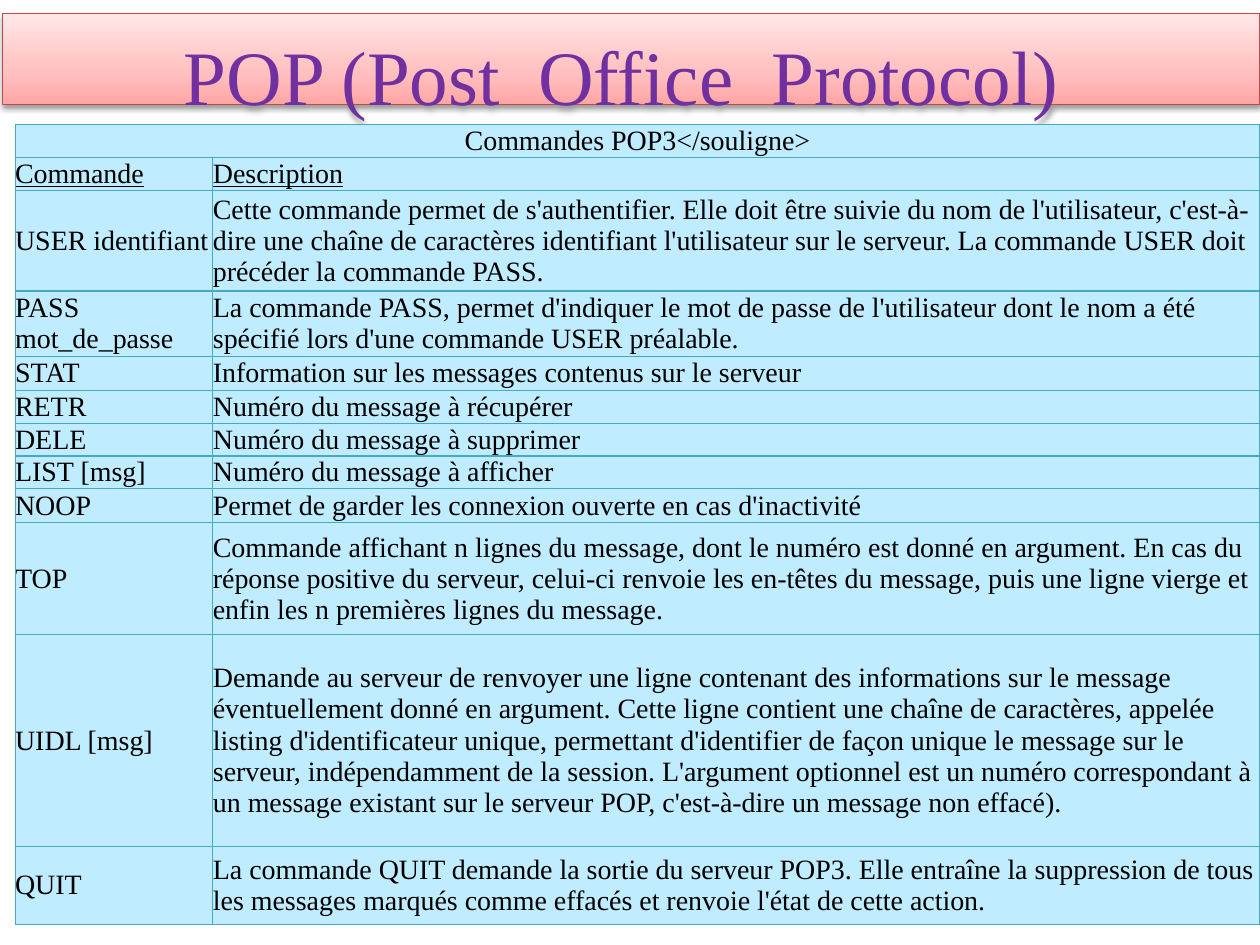
from lxml.etree import SubElement
from pptx import Presentation
from pptx.dml.color import RGBColor as RGB
from pptx.enum.text import MSO_ANCHOR as Anchor, MSO_AUTO_SIZE as AutoSize, PP_ALIGN as Align
from pptx.oxml import parse_xml
from pptx.oxml.ns import nsdecls, qn
from pptx.util import Inches, Pt

COLOURS = {
    "title": "7030A0", "title_line": "BF4C48", "text": "000000",
    "cell": "C0ECFF", "border": "46AAC5", "shadow": "000000",
}
TITLE_GRADIENT = [(0, "FFA6A5"), (35, "FFC0BF"), (100, "FFE7E7")]
FONT = "Times New Roman"
COLUMNS = [1.57, 8.31]
COMMANDS = [
    (0.26, "Commandes POP3</souligne>", ""),
    (0.26, "Commande", "Description"),
    (0.8, "USER identifiant",
     "Cette commande permet de s'authentifier. Elle doit être suivie du nom de l'utilisateur, "
     "c'est-à-dire une chaîne de caractères identifiant l'utilisateur sur le serveur. "
     "La commande USER doit précéder la commande PASS."),
    (0.52, "PASS mot_de_passe",
     "La commande PASS, permet d'indiquer le mot de passe de l'utilisateur dont le nom a été "
     "spécifié lors d'une commande USER préalable."),
    (0.27, "STAT", "Information sur les messages contenus sur le serveur"),
    (0.26, "RETR", "Numéro du message à récupérer"),
    (0.26, "DELE", "Numéro du message à supprimer"),
    (0.26, "LIST [msg]", "Numéro du message à afficher"),
    (0.27, "NOOP", "Permet de garder les connexion ouverte en cas d'inactivité"),
    (0.89, "TOP",
     "Commande affichant n lignes du message, dont le numéro est donné en argument. "
     "En cas du réponse positive du serveur, celui-ci renvoie les en-têtes du message, "
     "puis une ligne vierge et enfin les n premières lignes du message."),
    (1.68, "UIDL [msg]",
     "Demande au serveur de renvoyer une ligne contenant des informations sur le message "
     "éventuellement donné en argument. Cette ligne contient une chaîne de caractères, appelée "
     "listing d'identificateur unique, permettant d'identifier de façon unique le message sur le "
     "serveur, indépendamment de la session. L'argument optionnel est un numéro correspondant à "
     "un message existant sur le serveur POP, c'est-à-dire un message non effacé)."),
    (0.62, "QUIT",
     "La commande QUIT demande la sortie du serveur POP3. Elle entraîne la suppression de tous "
     "les messages marqués comme effacés et renvoie l'état de cette action."),
]


def format_runs(paragraph, size, colour):
    for run in paragraph.runs:
        run.font.name = FONT
        run.font.size = Pt(size)
        run.font.color.rgb = RGB.from_string(COLOURS[colour])


def add_borders(cell):
    props = cell._tc.get_or_add_tcPr()
    for position, side in enumerate(("lnL", "lnR", "lnT", "lnB")):
        line = SubElement(props, qn(f"a:{side}"), w=str(Pt(0.75)))
        fill = SubElement(line, qn("a:solidFill"))
        SubElement(fill, qn("a:srgbClr"), val=COLOURS["border"])
        props.insert(position, line)


prs = Presentation()
prs.slide_width, prs.slide_height = Inches(10), Inches(7.5)
slide = prs.slides.add_slide(prs.slide_layouts[5])

# Title band: gradient, thin outline and soft shadow
title = slide.shapes.title
title.left, title.top = Inches(0.02), Inches(0.11)
title.width, title.height = Inches(9.98), Inches(0.72)
stops = "".join(f'<a:gs pos="{share * 1000}"><a:srgbClr val="{colour}"/></a:gs>'
                for share, colour in TITLE_GRADIENT)
title_props = title._element.spPr
title_props.append(parse_xml(
    f'<a:gradFill {nsdecls("a")} rotWithShape="1"><a:gsLst>{stops}</a:gsLst>'
    '<a:lin ang="16200000" scaled="0"/></a:gradFill>'))
title.line.color.rgb = RGB.from_string(COLOURS["title_line"])
title.line.width = Pt(0.75)
title_props.append(parse_xml(
    f'<a:effectLst {nsdecls("a")}><a:outerShdw blurRad="{Pt(3.1)}" dist="{Pt(1.6)}" '
    f'dir="5400000" rotWithShape="0"><a:srgbClr val="{COLOURS["shadow"]}">'
    '<a:alpha val="38000"/></a:srgbClr></a:outerShdw></a:effectLst>'))

heading = title.text_frame
heading.text = "POP (Post  Office  Protocol) "
heading.auto_size = AutoSize.NONE
heading.vertical_anchor = Anchor.TOP
heading.margin_top, heading.margin_bottom = Inches(0.12), 0
heading.paragraphs[0].alignment = Align.CENTER
format_runs(heading.paragraphs[0], 44, "title")

# Table of commands
commands = slide.shapes.add_table(
    len(COMMANDS), len(COLUMNS), Inches(0.12), Inches(0.99),
    Inches(sum(COLUMNS)), Inches(sum(height for height, *_ in COMMANDS))).table
commands.first_row = commands.horz_banding = False
for column, width in zip(commands.columns, COLUMNS):
    column.width = Inches(width)

for r, (height, *texts) in enumerate(COMMANDS):
    commands.rows[r].height = Inches(height)
    for c, text in enumerate(texts):
        cell = commands.cell(r, c)
        cell.margin_left = cell.margin_right = cell.margin_top = cell.margin_bottom = 0
        cell.vertical_anchor = Anchor.MIDDLE
        cell.fill.solid()
        cell.fill.fore_color.rgb = RGB.from_string(COLOURS["cell"])
        add_borders(cell)
        if text:
            cell.text_frame.text = text
            paragraph = cell.text_frame.paragraphs[0]
            paragraph.alignment = Align.CENTER if r == 0 else Align.LEFT
            format_runs(paragraph, 16, "text")
            paragraph.runs[0].font.underline = r == 1
commands.cell(0, 0).merge(commands.cell(0, 1))

prs.save("out.pptx")
